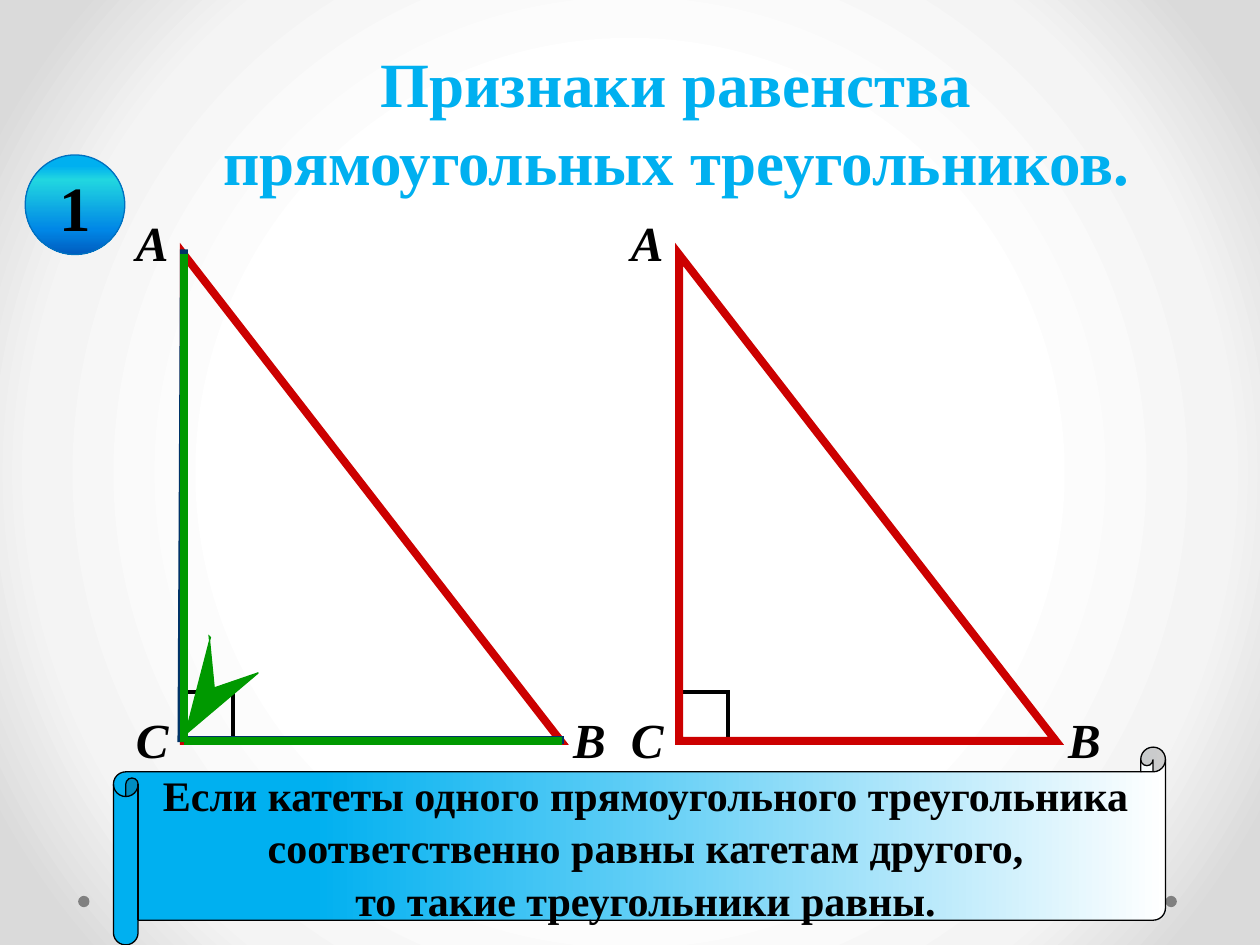
import pptx
import pptx.dml.color
import pptx.enum.shapes
import pptx.enum.text
import pptx.oxml
import pptx.oxml.ns
import pptx.util
from pptx.dml.color import RGBColor
from pptx.enum.shapes import MSO_SHAPE
from pptx.util import Inches

BLACK = RGBColor(0x00, 0x00, 0x00)
WHITE = RGBColor(0xFF, 0xFF, 0xFF)
PALE_GRAY = RGBColor(0xF4, 0xF4, 0xF4)
LIGHT_GRAY = RGBColor(0xDA, 0xDA, 0xDA)
GRAY = RGBColor(0x80, 0x80, 0x80)
SKY = RGBColor(0x00, 0xB0, 0xF0)
TURQUOISE = RGBColor(0x21, 0xD6, 0xE0)
AZURE = RGBColor(0x00, 0x87, 0xE6)
DEEP_BLUE = RGBColor(0x00, 0x5C, 0xBF)
RIM_BLUE = RGBColor(0x00, 0x70, 0xC0)
NAVY = RGBColor(0x00, 0x33, 0x66)
RED = RGBColor(0xCC, 0x00, 0x00)
GREEN = RGBColor(0x00, 0x99, 0x00)

NAMESPACE = pptx.oxml.ns.nsdecls("a")
RADIAL = '<a:path path="circle"><a:fillToRect l="50000" t="50000" r="50000" b="50000"/></a:path>'


def gradient_xml(stops, direction):
    """Return a gradient fill; stops are (percent, colour) pairs."""
    stop_list = "".join(
        f'<a:gs pos="{percent * 1000}"><a:srgbClr val="{color}"/></a:gs>'
        for percent, color in stops
    )
    return pptx.oxml.parse_xml(
        f'<a:gradFill {NAMESPACE} rotWithShape="1"><a:gsLst>{stop_list}</a:gsLst>'
        f"{direction}</a:gradFill>"
    )


def replace_solid_fill(element, gradient):
    solid = next(element.iter(pptx.oxml.ns.qn("a:solidFill")))
    solid.getparent().replace(solid, gradient)


class SlideBuilder:
    font_name = "Times New Roman"
    line_spacing = 1.04

    def __init__(self, slide):
        self.slide = slide

    def background(self, stops):
        self.slide.background.fill.solid()
        replace_solid_fill(self.slide.element, gradient_xml(stops, RADIAL))

    def set_text(self, shape, text, size, color, italic=False, centered=True):
        frame = shape.text_frame
        frame.text = text
        frame.word_wrap = False
        for paragraph in frame.paragraphs:
            paragraph.line_spacing = self.line_spacing
            paragraph.alignment = (
                pptx.enum.text.PP_ALIGN.CENTER if centered else pptx.enum.text.PP_ALIGN.LEFT
            )
            for run in paragraph.runs:
                run.font.name = self.font_name
                run.font.size = pptx.util.Pt(size)
                run.font.bold = True
                run.font.italic = italic
                run.font.color.rgb = color

    def text(self, left, top, width, height, text, size, color, **style):
        box = self.slide.shapes.add_textbox(
            Inches(left), Inches(top), Inches(width), Inches(height)
        )
        self.set_text(box, text, size, color, **style)

    def paint(self, shape, fill=None, line=None, weight=0.75):
        shape.shadow.inherit = False
        if fill is None:
            shape.fill.background()
        else:
            shape.fill.solid()
            shape.fill.fore_color.rgb = fill
        if line is None:
            shape.line.fill.background()
        else:
            shape.line.color.rgb = line
            shape.line.width = pptx.util.Pt(weight)
            # Sharp corners
            outline = next(shape.element.iter(pptx.oxml.ns.qn("a:ln")))
            outline.append(pptx.oxml.parse_xml(f'<a:miter {NAMESPACE} lim="800000"/>'))

    def shape(self, kind, left, top, width, height, **colors):
        shape = self.slide.shapes.add_shape(
            kind, Inches(left), Inches(top), Inches(width), Inches(height)
        )
        self.paint(shape, **colors)
        return shape

    def gradient_shape(self, kind, left, top, width, height, stops, angle, line):
        shape = self.shape(kind, left, top, width, height, fill=WHITE, line=line)
        direction = f'<a:lin ang="{angle * 60000}" scaled="0"/>'
        replace_solid_fill(shape.element, gradient_xml(stops, direction))
        shape.text_frame.vertical_anchor = pptx.enum.text.MSO_ANCHOR.MIDDLE
        return shape

    def polygon(self, points, color):
        (left, top), *others = points
        builder = self.slide.shapes.build_freeform(Inches(left), Inches(top))
        builder.add_line_segments([(Inches(x), Inches(y)) for x, y in others])
        self.paint(builder.convert_to_shape(), fill=color, line=color)

    def line(self, start, end, color, weight):
        connector = self.slide.shapes.add_connector(
            pptx.enum.shapes.MSO_CONNECTOR.STRAIGHT, *map(Inches, start + end)
        )
        connector.line.color.rgb = color
        connector.line.width = pptx.util.Pt(weight)
        connector.element.spPr.append(pptx.oxml.parse_xml(f"<a:effectLst {NAMESPACE}/>"))

    def right_triangle(self, left, top, width, height):
        label_left = left - 0.48
        label_right = left + width
        label_bottom = top + height - 0.32
        for x, y, name in (
            (label_left, top - 0.4, "А"),
            (label_right, label_bottom, "В"),
            (label_left, label_bottom, "С"),
        ):
            self.text(x, y, 0.46, 0.57, name, 28, BLACK, italic=True, centered=False)
        mark = 0.39
        self.shape(
            MSO_SHAPE.RECTANGLE, left, top + height - mark, mark, mark, line=BLACK, weight=2.5
        )
        self.shape(
            MSO_SHAPE.RIGHT_TRIANGLE, left, top, width, height, line=RED, weight=4.5
        )


def main():
    presentation = pptx.Presentation()
    presentation.slide_width = Inches(10)
    presentation.slide_height = Inches(7.5)
    slide = SlideBuilder(presentation.slides.add_slide(presentation.slide_layouts[6]))

    # Background and corner dots
    slide.background([(50, WHITE), (76, PALE_GRAY), (92, LIGHT_GRAY)])
    for left in (0.62, 9.25):
        slide.shape(MSO_SHAPE.OVAL, left, 7.11, 0.09, 0.09, fill=GRAY)

    # Title
    slide.text(
        1.19, 0.28, 8.35, 0.87, "Признаки равенства\nпрямоугольных треугольников.", 36, SKY
    )

    # Two equal right triangles
    for left in (1.46, 5.39):
        slide.right_triangle(left, 2.02, 2.99, 3.86)

    # Theorem on a scroll
    scroll = slide.gradient_shape(
        MSO_SHAPE.HORIZONTAL_SCROLL, 0.9, 5.93, 8.35, 1.57,
        [(19, SKY), (100, WHITE)], 0, BLACK,
    )
    slide.set_text(
        scroll,
        "Если катеты одного прямоугольного треугольника\n"
        "соответственно равны катетам другого,\n"
        "то такие треугольники равны.",
        24, BLACK,
    )

    # Theorem number
    badge = slide.gradient_shape(
        MSO_SHAPE.OVAL, 0.2, 1.23, 0.79, 0.79,
        [(11, SKY), (25, TURQUOISE), (75, AZURE), (100, DEEP_BLUE)], 90, RIM_BLUE,
    )
    slide.set_text(badge, "1", 36, BLACK)

    # Pointer to the right angle
    slide.polygon([(1.66, 5.05), (1.7, 5.46), (2.05, 5.34), (1.47, 5.83), (1.67, 5.06)], GREEN)

    # Highlighted legs
    for start, end, color in (
        ((1.48, 5.87), (4.48, 5.87), NAVY),
        ((1.46, 5.88), (4.46, 5.88), GREEN),
        ((1.44, 5.89), (1.46, 1.98), NAVY),
        ((1.46, 5.89), (1.46, 2.02), GREEN),
    ):
        slide.line(start, end, color, 4.5)

    presentation.save("out.pptx")


if __name__ == "__main__":
    main()
